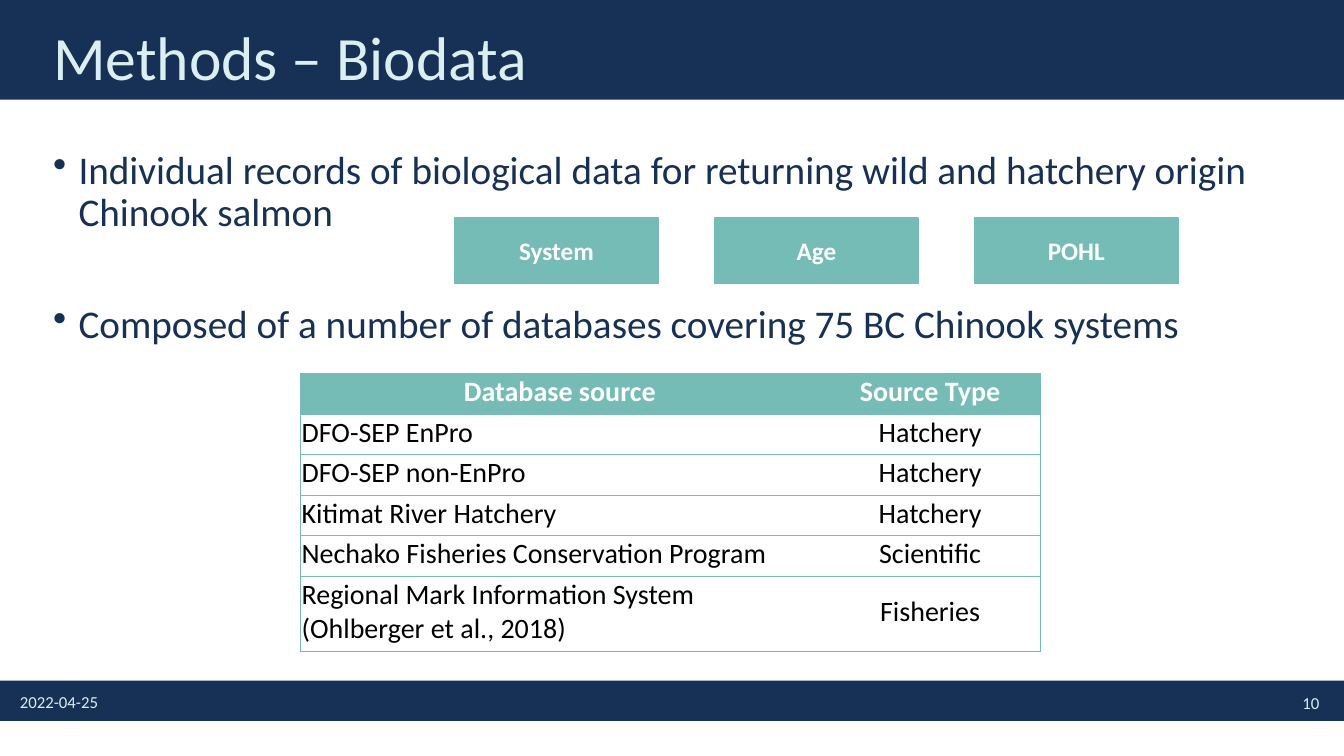
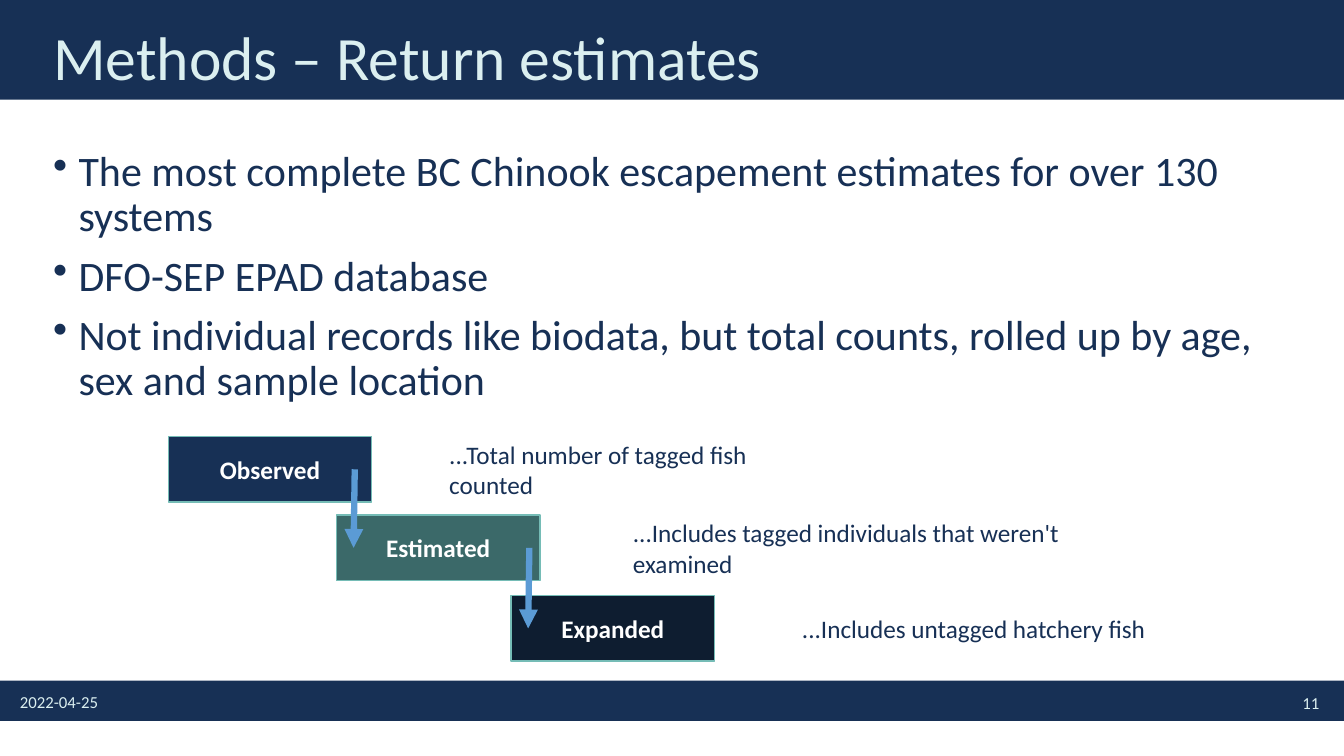
from dataclasses import dataclass

from pptx import Presentation
from pptx.dml.color import RGBColor
from pptx.enum.shapes import MSO_CONNECTOR as Link, MSO_SHAPE as Form
from pptx.enum.text import MSO_ANCHOR as Anchor, PP_ALIGN as Align
from pptx.oxml.ns import qn
from pptx.oxml.xmlchemy import OxmlElement as Node
from pptx.shapes.autoshape import Shape
from pptx.slide import Slide
from pptx.table import _Cell as Cell
from pptx.text.text import TextFrame
from pptx.util import Cm, Pt

# Shared look
NAVY = RGBColor(0x17, 0x30, 0x55)
PALE = RGBColor(0xDB, 0xEF, 0xF0)
TEAL = RGBColor(0x75, 0xBC, 0xB6)
PINE = RGBColor(0x3B, 0x69, 0x69)
INK = RGBColor(0x0E, 0x1D, 0x30)
BLUE = RGBColor(0x5B, 0x9B, 0xD5)
WHITE = RGBColor(0xFF, 0xFF, 0xFF)
BLACK = RGBColor(0, 0, 0)
FONT = "Calibri"
WIDE, HIGH = 33.87, 19.05
BOX_W, BOX_H = 5.13, 1.65


@dataclass
class Step:
    name: str
    fill: RGBColor
    left: float
    top: float
    note: str
    note_x: float
    note_w: float
    note_h: float

    @property
    def mid(self) -> float:
        return self.top + BOX_H / 2


STEPS = [
    Step("Observed", NAVY, 4.24, 11, "...Total number of tagged fish counted",
         11.07, 9.22, 1.8),
    Step("Estimated", PINE, 8.48, 12.98,
         "...Includes tagged individuals that weren't examined", 15.7, 12.67, 1.8),
    Step("Expanded", INK, 12.88, 15.01, "...Includes untagged hatchery fish",
         19.96, 12.67, 1.02),
]
TRAITS = ["System", "Age", "POHL"]
ROWS = [
    ("Database source", "Source Type"),
    ("DFO-SEP EnPro", "Hatchery"),
    ("DFO-SEP non-EnPro", "Hatchery"),
    ("Kitimat River Hatchery", "Hatchery"),
    ("Nechako Fisheries Conservation Program", "Scientific"),
    ("Regional Mark Information System (Ohlberger et al., 2018)", "Fisheries"),
]


# Text
def write(frame: TextFrame, *lines: str, size: float = 18, color: RGBColor = NAVY,
          bold: bool = False, align: Align = Align.LEFT, anchor: Anchor = Anchor.MIDDLE,
          space: float | None = None, gap: float = 0, bullet: bool = False) -> None:
    frame.word_wrap = True
    frame.vertical_anchor = anchor
    for i, line in enumerate(lines):
        para = frame.paragraphs[0] if i == 0 else frame.add_paragraph()
        para.alignment = align
        if space:
            para.line_spacing = space
        if i:
            para.space_before = Pt(gap)
        if bullet:
            props = para._p.get_or_add_pPr()
            props.set("marL", str(Cm(0.64)))
            props.set("indent", str(-Cm(0.64)))
            mark = Node("a:buChar")
            mark.set("char", "•")
            props.append(mark)
        run = para.add_run()
        run.text = line
        font = run.font
        font.name, font.size, font.bold = FONT, Pt(size), bold
        font.color.rgb = color


def label(slide: Slide, x: float, y: float, w: float, h: float, *lines: str, **fmt) -> None:
    box = slide.shapes.add_textbox(Cm(x), Cm(y), Cm(w), Cm(h))
    write(box.text_frame, *lines, **fmt)


# Shapes
def block(slide: Slide, x: float, y: float, w: float, h: float, fill: RGBColor,
          edge: RGBColor | None = None) -> Shape:
    shape = slide.shapes.add_shape(Form.RECTANGLE, Cm(x), Cm(y), Cm(w), Cm(h))
    shape.shadow.inherit = False
    shape.fill.solid()
    shape.fill.fore_color.rgb = fill
    if edge is None:
        shape.line.fill.background()
    else:
        shape.line.color.rgb = edge
        shape.line.width = Pt(1)
    return shape


def card(slide: Slide, x: float, y: float, name: str, fill: RGBColor) -> None:
    shape = block(slide, x, y, BOX_W, BOX_H, fill, TEAL)
    write(shape.text_frame, name, color=WHITE, bold=True, align=Align.CENTER)


def arrow(slide: Slide, x1: float, y1: float, x2: float, y2: float) -> None:
    line = slide.shapes.add_connector(Link.STRAIGHT, Cm(x1), Cm(y1), Cm(x2), Cm(y2))
    line.line.color.rgb = BLUE
    line.line.width = Pt(4.5)
    props = line.element.spPr
    tip = Node("a:tailEnd")
    tip.set("type", "triangle")
    props.find(qn("a:ln")).append(tip)
    props.append(Node("a:effectLst"))


# Table
def border(cell: Cell, shown: str) -> None:
    props = cell._tc.get_or_add_tcPr()
    for i, side in enumerate("LRTB"):
        line = Node(f"a:ln{side}")
        line.set("w", str(Pt(1)))
        if side in shown:
            fill, tint = Node("a:solidFill"), Node("a:srgbClr")
            tint.set("val", str(TEAL))
            fill.append(tint)
        else:
            fill = Node("a:noFill")
        line.append(fill)
        props.insert(i, line)


def sources(slide: Slide) -> None:
    cols, rows = [13.08, 5.58], [1.02] * 5 + [1.9]
    table = slide.shapes.add_table(len(rows), len(cols), Cm(7.57), Cm(9.42),
                                   Cm(sum(cols)), Cm(sum(rows))).table
    table.horz_banding = False
    for col, w in zip(table.columns, cols):
        col.width = Cm(w)
    for r, texts in enumerate(ROWS):
        table.rows[r].height = Cm(rows[r])
        head = r == 0
        for c, text in enumerate(texts):
            cell = table.cell(r, c)
            cell.margin_left = cell.margin_right = cell.margin_top = Cm(0.03)
            cell.margin_bottom = Cm(0.13)
            if head:
                cell.fill.solid()
                cell.fill.fore_color.rgb = TEAL
            else:
                cell.fill.background()
            write(cell.text_frame, text, size=20, bold=head,
                  color=WHITE if head else BLACK,
                  align=Align.CENTER if head or c else Align.LEFT)
            cell.vertical_anchor = Anchor.BOTTOM if head else Anchor.MIDDLE
            border(cell, "RTB" if c else "LTB")


# Slides
def start(deck: Presentation, title: str, page: int) -> Slide:
    slide = deck.slides.add_slide(deck.slide_layouts[6])
    block(slide, 0, 17.15, WIDE, 1.02, NAVY)
    block(slide, 0, 0, WIDE, 2.51, NAVY)
    label(slide, 1.09, 0.53, 29.21, 2, title, size=44, color=PALE, space=0.9)
    label(slide, 0.25, 17.17, 7.62, 1.02, "2022-04-25", size=12, color=PALE)
    label(slide, 25.88, 17.2, 7.62, 1.02, str(page), size=12, color=PALE,
          align=Align.RIGHT)
    return slide


def points(slide: Slide, *lines: str, size: float, gap: float, high: float) -> None:
    label(slide, 1.09, 3.66, 31.55, high, *lines, size=size, gap=gap, space=0.9,
          bullet=True, anchor=Anchor.TOP)


def biodata(deck: Presentation) -> None:
    slide = start(deck, "Methods – Biodata", 10)
    points(slide,
           "Individual records of biological data for returning wild and hatchery "
           "origin Chinook salmon",
           "Composed of a number of databases covering 75 BC Chinook systems",
           size=28, gap=50, high=12.78)
    sources(slide)
    for i, name in enumerate(TRAITS):
        card(slide, 11.46 + i * 6.55, 5.49, name, TEAL)


def returns(deck: Presentation) -> None:
    slide = start(deck, "Methods – Return estimates", 11)
    points(slide,
           "The most complete BC Chinook escapement estimates for over 130 systems",
           "DFO-SEP EPAD database",
           "Not individual records like biodata, but total counts, rolled up by age, "
           "sex and sample location",
           size=30, gap=10, high=11.91)
    for step in STEPS:
        card(slide, step.left, step.top, step.name, step.fill)
        label(slide, step.note_x, step.mid - step.note_h / 2, step.note_w,
              step.note_h, step.note)
    for prev, step in zip(STEPS, STEPS[1:]):
        x = step.left + 0.43
        arrow(slide, x + 0.03, prev.mid, x, step.mid)


def main() -> None:
    deck = Presentation()
    deck.slide_width, deck.slide_height = Cm(WIDE), Cm(HIGH)
    biodata(deck)
    returns(deck)
    deck.save("out.pptx")


if __name__ == "__main__":
    main()
